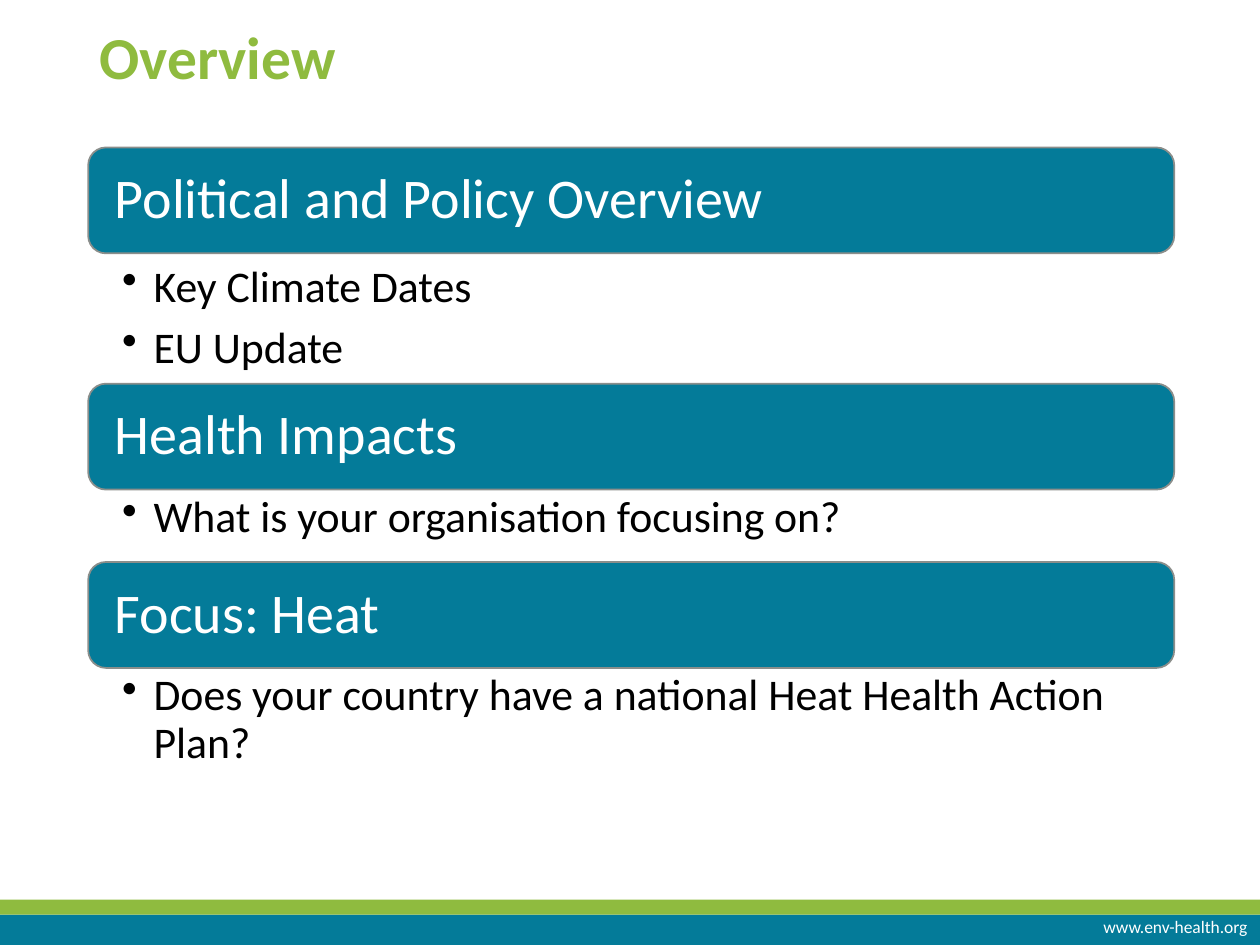
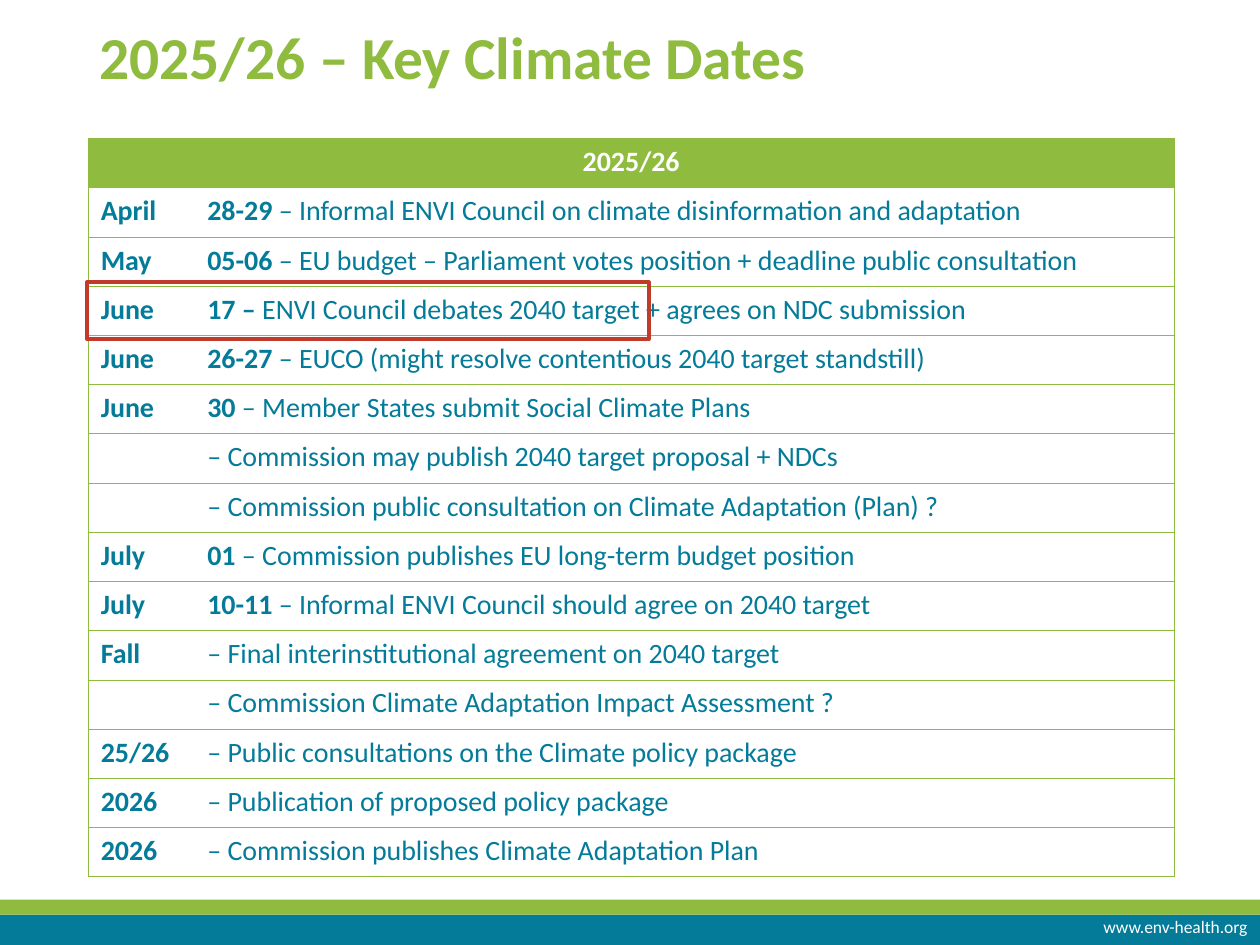
import lxml.etree
import pptx
import pptx.dml.color
import pptx.enum.shapes
import pptx.enum.text
import pptx.oxml.ns
import pptx.util

Pt = pptx.util.Pt
qn = pptx.oxml.ns.qn
RECTANGLE = pptx.enum.shapes.MSO_SHAPE.RECTANGLE
ROUNDED = pptx.enum.shapes.MSO_SHAPE.ROUNDED_RECTANGLE
TOP = pptx.enum.text.MSO_ANCHOR.TOP
LEFT = pptx.enum.text.PP_ALIGN.LEFT
CENTER = pptx.enum.text.PP_ALIGN.CENTER

TEAL, GREEN, WHITE, BLACK = "047B99", "8FBB3F", "FFFFFF", "000000"
GREY, RED = "8B8E8B", "C23A2A"
CONTENT_LEFT, CONTENT_WIDTH = 50.4, 620.6


def rgb(hex_colour):
    return pptx.dml.color.RGBColor.from_string(hex_colour)


def format_runs(paragraph, size, colour, bold=False):
    for run in paragraph.runs:
        run.font.name = "Calibri"
        run.font.size = Pt(size)
        run.font.bold = bold
        run.font.color.rgb = rgb(colour)


deck = pptx.Presentation()
deck.slide_width, deck.slide_height = Pt(720), Pt(540)

# Title and footer shared by both slides
slides = []
for heading, title_height in [("Overview", 57.6), ("2025/26 – Key Climate Dates", 44.6)]:
    slide = deck.slides.add_slide(deck.slide_layouts[5])
    slides.append(slide)

    for band_top, band_height, band_colour in [(522.7, 17.3, TEAL), (514.1, 8.6, GREEN)]:
        band = slide.shapes.add_shape(RECTANGLE, 0, Pt(band_top), Pt(720), Pt(band_height))
        band.shadow.inherit = False
        band.fill.solid()
        band.fill.fore_color.rgb = rgb(band_colour)
        band.line.fill.background()

    website = slide.shapes.add_textbox(Pt(623.5), Pt(519.8), Pt(96.5), Pt(19.4))
    website.text_frame.word_wrap = False
    website.text_frame.text = "www.env-health.org"
    format_runs(website.text_frame.paragraphs[0], 10, WHITE)

    title = slide.shapes.title
    title.left, title.top = Pt(49.7), Pt(12.2)
    title.width, title.height = Pt(CONTENT_WIDTH), Pt(title_height)
    title.text_frame.text = heading
    title.text_frame.vertical_anchor = TOP
    title_line = title.text_frame.paragraphs[0]
    title_line.alignment = LEFT
    title_line.line_spacing = 0.9
    format_runs(title_line, 34, GREEN, bold=True)

overview, key_dates = slides

# Overview: each topic bar is followed by its bulleted points
TOPIC_HEIGHT = 60.5
topics = [
    ("Political and Policy Overview", ["Key Climate Dates", "EU Update"], 74.5, 1.0),
    ("Health Impacts", ["What is your organisation focusing on?"], 41.4, 0.9),
    ("Focus: Heat", ["Does your country have a national Heat Health Action Plan?"], 62.6, 0.9),
]
top = 84.3
for topic, points, points_height, spacing in topics:
    topic_bar = overview.shapes.add_shape(
        ROUNDED, Pt(CONTENT_LEFT), Pt(top), Pt(CONTENT_WIDTH), Pt(TOPIC_HEIGHT))
    topic_bar.shadow.inherit = False
    topic_bar.fill.solid()
    topic_bar.fill.fore_color.rgb = rgb(TEAL)
    topic_bar.line.color.rgb = rgb(GREY)
    topic_bar.line.width = Pt(1)
    topic_bar.text_frame.margin_left = Pt(12.2)
    topic_bar.text_frame.text = topic
    topic_line = topic_bar.text_frame.paragraphs[0]
    topic_line.alignment = LEFT
    topic_line.line_spacing = 0.9
    format_runs(topic_line, 32, WHITE)
    top += TOPIC_HEIGHT

    point_list = overview.shapes.add_textbox(
        Pt(CONTENT_LEFT), Pt(top), Pt(CONTENT_WIDTH), Pt(points_height))
    frame = point_list.text_frame
    frame.word_wrap = True
    frame.margin_left, frame.margin_right = Pt(19.4), Pt(18)
    frame.margin_top = frame.margin_bottom = Pt(2.9)
    frame.text = "\n".join(points)
    for point in frame.paragraphs:
        properties = point._p.get_or_add_pPr()
        properties.set("marL", str(Pt(18)))
        properties.set("indent", str(-Pt(18)))
        lxml.etree.SubElement(properties, qn("a:buChar"), char="•")
        point.level = 1
        point.line_spacing = spacing
        point.space_after = Pt(5)
        format_runs(point, 25, BLACK)
    top += points_height

# Key dates: month, bold day, event
dates = [
    ("April", "28-29", " – Informal ENVI Council on climate disinformation and adaptation"),
    ("May", "05-06", " – EU budget – Parliament votes position + deadline public consultation"),
    ("June", "17 – ", "ENVI Council debates 2040 target + agrees on NDC submission"),
    ("June", "26-27", " – EUCO (might resolve contentious 2040 target standstill)"),
    ("June", "30", " – Member States submit Social Climate Plans"),
    ("", "", "– Commission may publish 2040 target proposal + NDCs"),
    ("", "", "– Commission public consultation on Climate Adaptation (Plan) ?"),
    ("July", "01", " – Commission publishes EU long-term budget position"),
    ("July", "10-11", " – Informal ENVI Council should agree on 2040 target"),
    ("Fall", "", "– Final interinstitutional agreement on 2040 target"),
    ("", "", "– Commission Climate Adaptation Impact Assessment ?"),
    ("25/26", "", "– Public consultations on the Climate policy package"),
    ("2026", "", "– Publication of proposed policy package"),
    ("2026", "", "– Commission publishes Climate Adaptation Plan"),
]
ROW_HEIGHT = 28.13
row_count = len(dates) + 1
calendar = key_dates.shapes.add_table(
    row_count, 2, Pt(CONTENT_LEFT), Pt(79.2), Pt(CONTENT_WIDTH), Pt(ROW_HEIGHT * row_count)).table
calendar.first_row = calendar.horz_banding = False
calendar.columns[0].width, calendar.columns[1].width = Pt(60.9), Pt(559.7)
for row in calendar.rows:
    row.height = Pt(ROW_HEIGHT)

# Green rules around every row, none between the columns
for index, cell in enumerate(calendar.iter_cells()):
    row_number, column = divmod(index, 2)
    inner_edge = "a:lnL" if column else "a:lnR"
    for edge in ("a:lnL", "a:lnR", "a:lnT", "a:lnB"):
        rule = lxml.etree.SubElement(cell._tc.get_or_add_tcPr(), qn(edge), w=str(Pt(0.5)))
        if edge == inner_edge and row_number > 0:
            lxml.etree.SubElement(rule, qn("a:noFill"))
        else:
            paint = lxml.etree.SubElement(rule, qn("a:solidFill"))
            lxml.etree.SubElement(paint, qn("a:srgbClr"), val=GREEN)
    cell.fill.background()

# Header row
period = calendar.cell(0, 0)
period.merge(calendar.cell(0, 1))
period.fill.solid()
period.fill.fore_color.rgb = rgb(GREEN)
period.text_frame.text = "2025/26"
period_line = period.text_frame.paragraphs[0]
period_line.alignment = CENTER
format_runs(period_line, 16, WHITE, bold=True)

# Date rows
for row_number, (month, day, event) in enumerate(dates, start=1):
    month_line = calendar.cell(row_number, 0).text_frame.paragraphs[0]
    if month:
        month_line.text = month
        format_runs(month_line, 16, TEAL, bold=True)
    else:
        lxml.etree.SubElement(month_line._p, qn("a:endParaRPr"), sz="1600")

    event_line = calendar.cell(row_number, 1).text_frame.paragraphs[0]
    for part in filter(None, (day, event)):
        event_line.add_run().text = part
    format_runs(event_line, 16, TEAL)
    if day:
        event_line.runs[0].font.bold = True

# Frame marking the June Council debate
highlight = key_dates.shapes.add_shape(RECTANGLE, Pt(49.7), Pt(161.3), Pt(321.1), Pt(32.4))
highlight.shadow.inherit = False
highlight.fill.background()
highlight.line.color.rgb = rgb(RED)
highlight.line.width = Pt(2.25)

deck.save("out.pptx")
